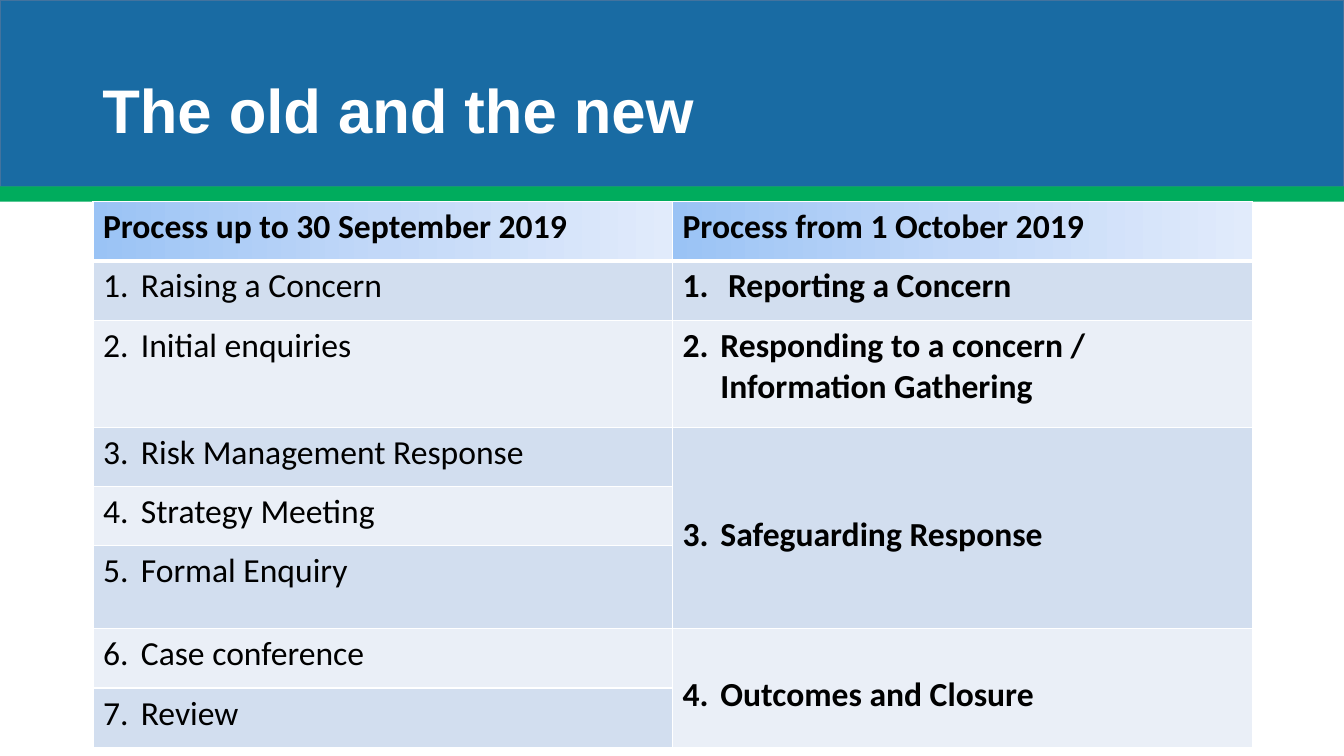
from lxml import etree
from pptx import Presentation
from pptx.dml.color import RGBColor
from pptx.enum.shapes import MSO_SHAPE as Shape
from pptx.enum.text import MSO_ANCHOR as Anchor
from pptx.oxml.ns import qn
from pptx.util import Pt

COLORS = {
    "blue": "196BA3", "outline": "43739E", "green": "00AC5D",
    "white": "FFFFFF", "black": "000000",
    "dark_band": "D2DEEF", "light_band": "EAEFF7",
}
HEADER_STOPS = [(0, "9AC3F5"), (50, "C2D8F8"), (100, "E1EBFB")]
HEADERS = ["Process up to 30 September 2019", "Process from 1 October 2019"]
OLD_STEPS = [
    "Raising a Concern", "Initial enquiries", "Risk Management Response",
    "Strategy Meeting", "Formal Enquiry", "Case conference", "Review",
]
NEW_STEPS = [
    (1, 1, " Reporting a Concern", 3.6),
    (2, 1, "Responding to a concern / Information Gathering", 3.6),
    (3, 3, "Safeguarding Response", 62.2),
    (6, 2, "Outcomes and Closure", 32.9),
]
ROW_HEIGHTS = [42.4, 42.4, 76.4, 42.4, 42.4, 59.2, 42.4, 42.4]


def color(name):
    return RGBColor.from_string(COLORS[name])


def add_band(page, top, height, fill, outline=None):
    band = page.shapes.add_shape(Shape.RECTANGLE, 0, Pt(top), Pt(960), Pt(height))
    band.shadow.inherit = False
    band.fill.solid()
    band.fill.fore_color.rgb = color(fill)
    if outline:
        band.line.color.rgb = color(outline)
        band.line.width = Pt(1)
    else:
        band.line.fill.background()


def add_span(para, text, font, size, shade, bold):
    span = para.add_run()
    span.text = text
    span.font.name = font
    span.font.size = Pt(size)
    span.font.bold = bold
    span.font.color.rgb = color(shade)


def add_title(page, text):
    box = page.shapes.add_textbox(Pt(66), Pt(28.8), Pt(790.5), Pt(104.4))
    frame = box.text_frame
    frame.word_wrap = True
    frame.vertical_anchor = Anchor.MIDDLE
    para = frame.paragraphs[0]
    para.line_spacing = 0.9
    add_span(para, text, "Arial", 44, "white", True)


def add_borders(cell, bottom):
    properties = cell._tc.get_or_add_tcPr()
    for side, width in (("L", 1), ("R", 1), ("T", 1), ("B", bottom)):
        line = etree.SubElement(properties, qn(f"a:ln{side}"), w=str(Pt(width)))
        solid = etree.SubElement(line, qn("a:solidFill"))
        etree.SubElement(solid, qn("a:srgbClr"), val=COLORS["white"])


def fill_header(cell):
    gradient = etree.SubElement(cell._tc.get_or_add_tcPr(), qn("a:gradFill"))
    stops = etree.SubElement(gradient, qn("a:gsLst"))
    for position, shade in HEADER_STOPS:
        stop = etree.SubElement(stops, qn("a:gs"), pos=str(position * 1000))
        etree.SubElement(stop, qn("a:srgbClr"), val=shade)
    etree.SubElement(gradient, qn("a:lin"), ang="0", scaled="0")


def style_cell(cell, row):
    add_borders(cell, 1 if row else 3)
    if row:
        cell.fill.solid()
        cell.fill.fore_color.rgb = color("dark_band" if row % 2 else "light_band")
    else:
        fill_header(cell)


def add_step(cell, number, text, bold):
    para = cell.text_frame.paragraphs[0]
    properties = para._p.get_or_add_pPr()
    properties.set("marL", str(Pt(27)))
    properties.set("indent", str(Pt(-27)))
    etree.SubElement(properties, qn("a:buFont"), typeface="+mj-lt")
    etree.SubElement(properties, qn("a:buAutoNum"), type="arabicPeriod", startAt=str(number))
    add_span(para, text, "Calibri", 24, "black", bold)


def add_process_table(page):
    frame = page.shapes.add_table(
        len(ROW_HEIGHTS), 2, Pt(66.4), Pt(144), Pt(828), Pt(sum(ROW_HEIGHTS)))
    table = frame.table
    table.first_row = False
    table.horz_banding = False
    for row, height in enumerate(ROW_HEIGHTS):
        table.rows[row].height = Pt(height)
        for column in range(2):
            style_cell(table.cell(row, column), row)
    for column, text in enumerate(HEADERS):
        para = table.cell(0, column).text_frame.paragraphs[0]
        add_span(para, text, "Calibri", 24, "black", True)
    for number, text in enumerate(OLD_STEPS, 1):
        add_step(table.cell(number, 0), number, text, False)
    for number, (row, height, text, inset) in enumerate(NEW_STEPS, 1):
        cell = table.cell(row, 1)
        if height > 1:
            cell.merge(table.cell(row + height - 1, 1))
        cell.margin_top = Pt(inset)
        add_step(cell, number, text, True)


def main():
    deck = Presentation()
    deck.slide_width, deck.slide_height = Pt(960), Pt(540)
    page = deck.slides.add_slide(deck.slide_layouts[6])
    add_band(page, 0, 133.2, "blue", "outline")
    add_band(page, 133.2, 10.8, "green")
    add_title(page, "The old and the new")
    add_process_table(page)
    deck.save("out.pptx")


if __name__ == "__main__":
    main()
